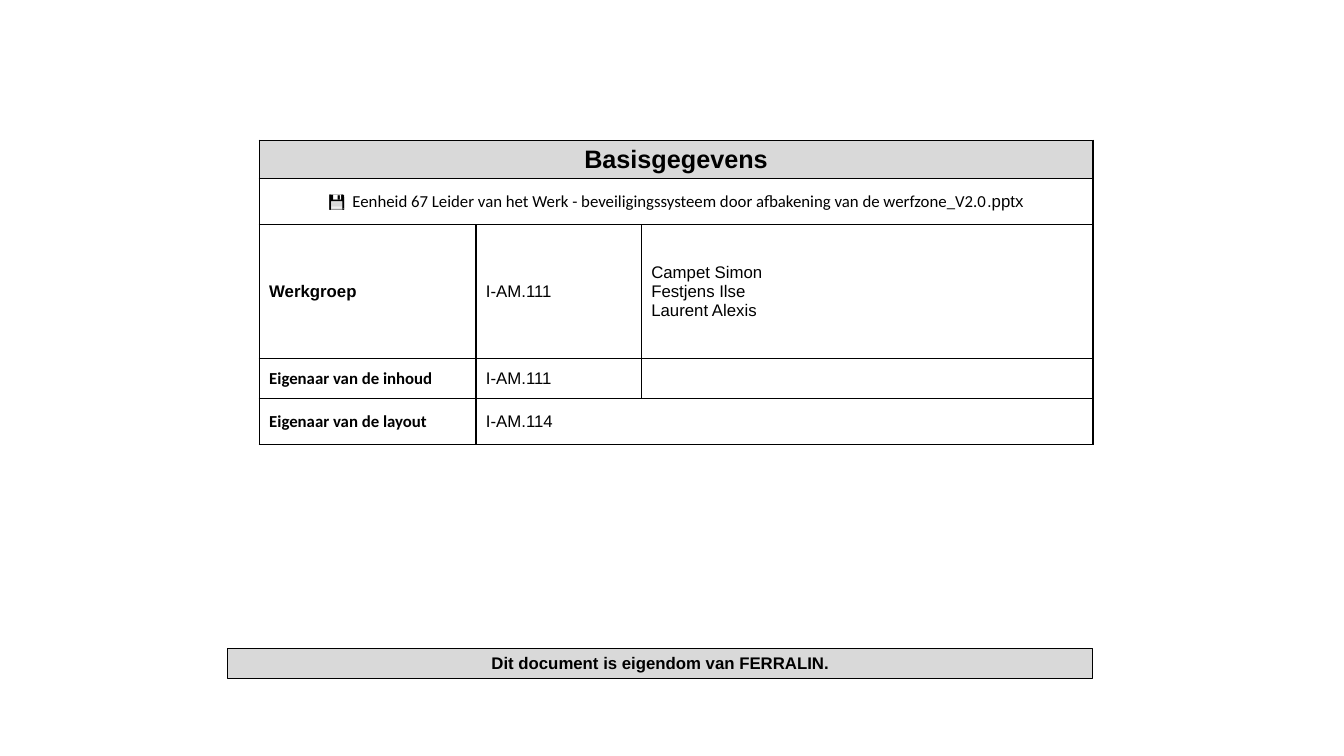
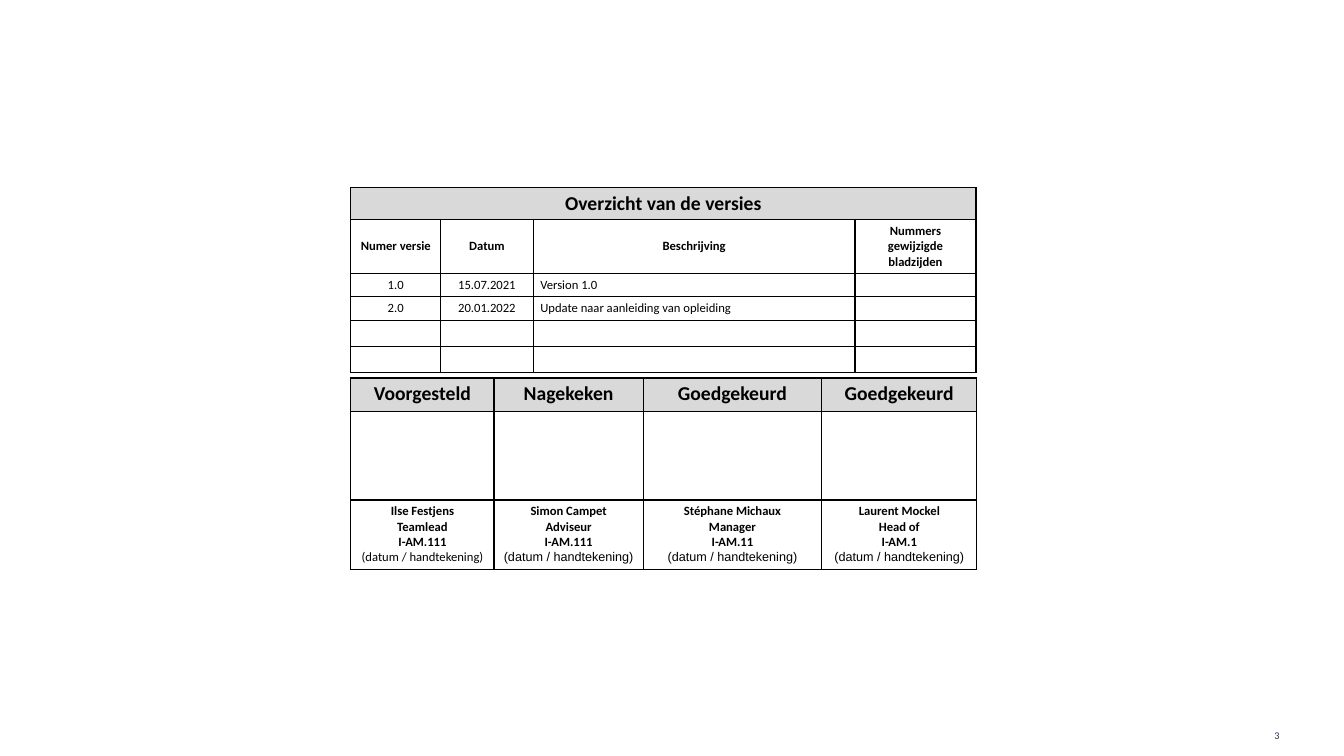
from dataclasses import dataclass, replace

from lxml.etree import SubElement
from pptx import Presentation
from pptx.dml.color import RGBColor
from pptx.enum.shapes import MSO_SHAPE as Shape
from pptx.enum.text import MSO_ANCHOR as Anchor, PP_ALIGN as Align
from pptx.oxml import parse_xml
from pptx.oxml.ns import nsdecls, qn
from pptx.util import Inches, Pt


@dataclass(frozen=True)
class Theme:
    black: str = "000000"
    band: str = "D9D9D9"
    white: str = "FFFFFF"
    number: str = "213A53"
    sans: str = "Arial"
    humanist: str = "Calibri"
    main_title: float = 18
    table_title: float = 14
    body: float = 12
    small: float = 9
    page_number: float = 7.3
    border: float = 1
    bar_line: float = 0.75


@dataclass(frozen=True)
class Style:
    size: float
    font: str
    bold: bool = False
    align: Align = Align.LEFT
    anchor: Anchor = Anchor.MIDDLE
    fill: str = ""
    margins: tuple = (0.1, 0.05)


THEME = Theme()

# Text styles: basic data
PLAIN = Style(THEME.body, THEME.sans)
LABEL = replace(PLAIN, bold=True)
OWNER = replace(LABEL, font=THEME.humanist)
FILE_NAME = replace(PLAIN, font=THEME.humanist, align=Align.CENTER)
MAIN_TITLE = Style(THEME.main_title, THEME.sans, True, Align.CENTER,
                   Anchor.TOP, THEME.band)
BAR = replace(MAIN_TITLE, size=THEME.body)

# Text styles: versions and signatures
ENTRY = Style(THEME.small, THEME.humanist, anchor=Anchor.TOP,
              fill=THEME.white, margins=(0.07, 0.04))
CENTERED = replace(ENTRY, align=Align.CENTER)
HEADING = replace(CENTERED, bold=True, anchor=Anchor.MIDDLE)
SIGNER = replace(CENTERED, bold=True)
TABLE_TITLE = replace(SIGNER, size=THEME.table_title, fill=THEME.band)
PAGE_NUMBER = Style(THEME.page_number, THEME.humanist)

# Content: a cell is (style, lines, columns spanned); a line is text or
# a list of (text, style changes) runs
BASIC_DATA = [
    [(MAIN_TITLE, ["Basisgegevens"], 3)],
    [(FILE_NAME, [[
        ("💾  ", {}),
        ("Eenheid 67 Leider van het Werk - beveiligingssysteem door "
         "afbakening van de werfzone_V2.0", {}),
        (".pptx", {"font": THEME.sans})]], 3)],
    [(LABEL, ["Werkgroep"], 1), (PLAIN, ["I-AM.111"], 1),
     (PLAIN, ["Campet Simon", "Festjens Ilse", "Laurent Alexis"], 1)],
    [(OWNER, ["Eigenaar van de inhoud"], 1), (PLAIN, ["I-AM.111"], 1),
     (PLAIN, [], 1)],
    [(OWNER, ["Eigenaar van de layout"], 1), (PLAIN, ["I-AM.114"], 2)],
]
OWNERSHIP = "Dit document is eigendom van FERRALIN."

VERSION_HEADINGS = ["Numer versie", "Datum", "Beschrijving",
                    "Nummers gewijzigde bladzijden"]
VERSIONS = [
    ("1.0", "15.07.2021", "Version 1.0", ""),
    ("2.0", "20.01.2022", "Update naar aanleiding van opleiding", ""),
    ("", "", "", ""),
    ("", "", "", ""),
]
VERSION_STYLES = [CENTERED, CENTERED, ENTRY, ENTRY]

SIGNATURE = "(datum / handtekening)"
SIGNERS = [
    ("Voorgesteld", ["Ilse Festjens", "Teamlead", "I-AM.111"], THEME.humanist),
    ("Nagekeken", ["Simon Campet", "Adviseur", "I-AM.111"], THEME.sans),
    ("Goedgekeurd", ["Stéphane Michaux", "Manager", "I-AM.11"], THEME.sans),
    ("Goedgekeurd", ["Laurent Mockel", "Head of", "I-AM.1"], THEME.sans),
]


def write_lines(frame, lines, style, color=THEME.black):
    """Fill a text frame, one paragraph a line."""
    for index, line in enumerate(lines):
        paragraph = frame.paragraphs[0] if index == 0 else frame.add_paragraph()
        paragraph.alignment = style.align
        runs = [(line, {})] if isinstance(line, str) else line
        for text, changes in runs:
            look = replace(style, **changes)
            run = paragraph.add_run()
            run.text = text
            run.font.size = Pt(look.size)
            run.font.name = look.font
            run.font.bold = look.bold
            run.font.color.rgb = RGBColor.from_string(color)
    if not lines:
        # The end mark keeps an empty row from growing
        SubElement(frame.paragraphs[0]._p, qn("a:endParaRPr"),
                   sz=str(int(style.size * 100)))


def draw_borders(cell):
    properties = cell._tc.get_or_add_tcPr()
    for index, side in enumerate(("lnL", "lnR", "lnT", "lnB")):
        properties.insert(index, parse_xml(
            f'<a:{side} {nsdecls("a")} w="{Pt(THEME.border)}">'
            f'<a:solidFill><a:srgbClr val="{THEME.black}"/></a:solidFill>'
            f'</a:{side}>'))


def format_cell(cell, style):
    if style.fill:
        cell.fill.solid()
        cell.fill.fore_color.rgb = RGBColor.from_string(style.fill)
    else:
        cell.fill.background()
    cell.vertical_anchor = style.anchor
    side, top = style.margins
    cell.margin_left = cell.margin_right = Inches(side)
    cell.margin_top = cell.margin_bottom = Inches(top)
    draw_borders(cell)


def add_grid(slide, left, top, widths, heights, rows):
    table = slide.shapes.add_table(
        len(heights), len(widths), Inches(left), Inches(top),
        Inches(sum(widths)), Inches(sum(heights))).table
    table.first_row = table.horz_banding = False
    for column, width in zip(table.columns, widths):
        column.width = Inches(width)
    for row, height in zip(table.rows, heights):
        row.height = Inches(height)
    for row_index, row in enumerate(rows):
        start = 0
        for style, lines, span in row:
            cells = [table.cell(row_index, start + step) for step in range(span)]
            for cell in cells:
                format_cell(cell, style)
            if span > 1:
                cells[0].merge(cells[-1])
            write_lines(cells[0].text_frame, lines, style)
            start += span


def add_basic_data(presentation):
    slide = presentation.slides.add_slide(presentation.slide_layouts[6])
    # Ownership bar
    bar = slide.shapes.add_shape(Shape.RECTANGLE, Inches(2.26), Inches(6.43),
                                 Inches(8.58), Inches(0.3))
    bar.shadow.inherit = False
    bar.fill.solid()
    bar.fill.fore_color.rgb = RGBColor.from_string(BAR.fill)
    bar.line.color.rgb = RGBColor.from_string(THEME.black)
    bar.line.width = Pt(THEME.bar_line)
    bar.text_frame.word_wrap = True
    bar.text_frame.vertical_anchor = BAR.anchor
    write_lines(bar.text_frame, [OWNERSHIP], BAR)
    # Basic data table
    add_grid(slide, 2.57, 1.39, [2.15, 1.64, 4.48],
             [0.32, 0.46, 1.33, 0.39, 0.46], BASIC_DATA)


def add_versions(presentation):
    slide = presentation.slides.add_slide(presentation.slide_layouts[6])
    # Signatures
    signatures = [
        [(TABLE_TITLE, [role], 1) for role, _, _ in SIGNERS],
        [(CENTERED, [], 1) for _ in SIGNERS],
        [(SIGNER, person + [[(SIGNATURE, {"bold": False, "font": font})]], 1)
         for _, person, font in SIGNERS],
    ]
    add_grid(slide, 3.48, 3.75, [1.42, 1.48, 1.77, 1.54],
             [0.33, 0.88, 0.68], signatures)
    # Version history
    history = [[(TABLE_TITLE, ["Overzicht van de versies"], 4)],
               [(HEADING, [heading], 1) for heading in VERSION_HEADINGS]]
    history += [[(style, [text] if text else [], 1)
                 for style, text in zip(VERSION_STYLES, version)]
                for version in VERSIONS]
    add_grid(slide, 3.48, 1.86, [0.89, 0.92, 3.19, 1.2],
             [0.3, 0.53, 0.23, 0.23, 0.26, 0.26], history)
    # Page number
    box = slide.shapes.add_textbox(Inches(12.54), Inches(7.1),
                                   Inches(0.62), Inches(0.4))
    box.text_frame.word_wrap = True
    box.text_frame.vertical_anchor = PAGE_NUMBER.anchor
    write_lines(box.text_frame, ["3"], PAGE_NUMBER, THEME.number)


def main():
    presentation = Presentation()
    presentation.slide_width = Inches(13.33)
    presentation.slide_height = Inches(7.5)
    add_basic_data(presentation)
    add_versions(presentation)
    presentation.save("out.pptx")


if __name__ == "__main__":
    main()
